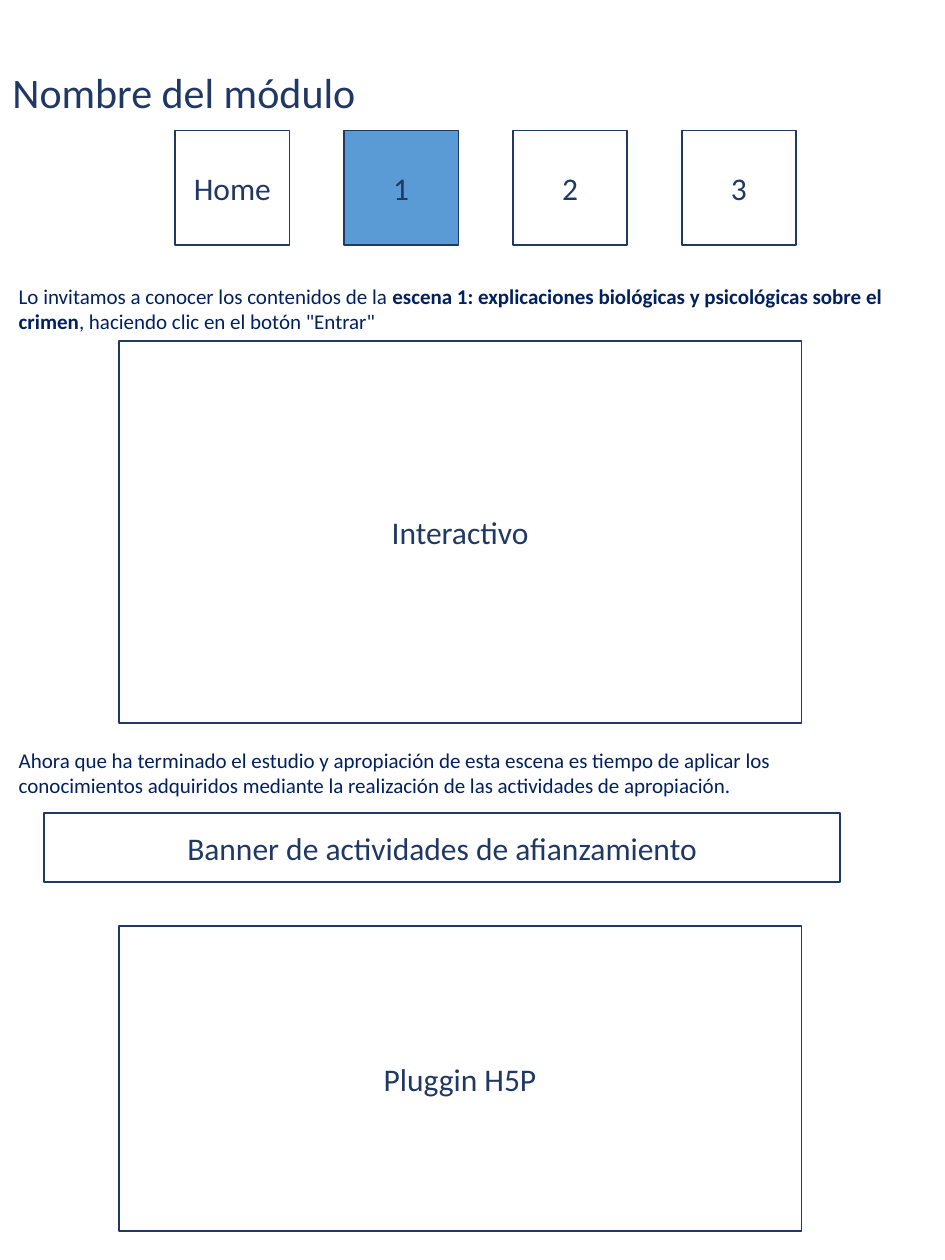
from pptx import Presentation
from pptx.dml.color import RGBColor
from pptx.enum.shapes import MSO_SHAPE as Shape
from pptx.enum.text import MSO_ANCHOR as Anchor, MSO_AUTO_SIZE as AutoSize, PP_ALIGN as Align
from pptx.util import Pt

THEME = {
    "font": "Calibri",
    "navy": RGBColor.from_string("203864"),
    "ink": RGBColor.from_string("002060"),
    "active": RGBColor.from_string("5B9BD5"),
    "title": Pt(24),
    "label": Pt(18),
    "body": Pt(12),
}


def write(para, text, size, color, bold=False):
    span = para.add_run()
    span.text = text
    formats = {"name": THEME["font"], "size": THEME[size], "bold": bold}
    for name, value in formats.items():
        setattr(span.font, name, value)
    span.font.color.rgb = THEME[color]


deck = Presentation()
deck.slide_width, deck.slide_height = Pt(540), Pt(720)
page = deck.slides.add_slide(deck.slide_layouts[6])

# Module title and introductory texts: place, wrapping, size, colour, spans (text, bold)
texts = [
    ((0, 34.7, 212.4, 36.3), False, "title", "navy", [("Nombre del módulo", False)]),
    ((3.6, 158.4, 517.7, 36.3), True, "body", "ink", [
        ("Lo invitamos a conocer los contenidos de la ", False),
        ("escena 1: explicaciones biológicas y psicológicas sobre el crimen", True),
        (', haciendo clic en el botón "Entrar"', False),
    ]),
    ((3.6, 423.4, 510.5, 36.3), True, "body", "ink", [
        ("Ahora que ha terminado el estudio y apropiación de esta escena es tiempo de aplicar "
         "los conocimientos adquiridos mediante la realización de las actividades de "
         "apropiación.", False),
    ]),
]
for place, wrap, size, color, spans in texts:
    box = page.shapes.add_textbox(*map(Pt, place))
    frame = box.text_frame
    frame.word_wrap = wrap
    frame.auto_size = AutoSize.SHAPE_TO_FIT_TEXT
    for text, bold in spans:
        write(frame.paragraphs[0], text, size, color, bold)

# Navigation buttons in an even row, followed by the content areas
tabs = ["Home", "1", "2", "3"]
current_tab = "1"
tab_left, tab_top, tab_side, tab_step = 100, 74.6, 65.5, 96.5
blocks = [
    (text, (tab_left + index * tab_step, tab_top, tab_side, tab_side))
    for index, text in enumerate(tabs)
]
area_left, area_width = 67.8, 390.2
blocks += [
    ("Interactivo", (area_left, 195, area_width, 218.2)),
    ("Banner de actividades de afianzamiento", (25.2, 464.5, 455, 39.6)),
    ("Pluggin H5P", (area_left, 529.2, area_width, 174.2)),
]
for text, place in blocks:
    block = page.shapes.add_shape(Shape.RECTANGLE, *map(Pt, place))
    block.shadow.inherit = False
    if text == current_tab:
        block.fill.solid()
        block.fill.fore_color.rgb = THEME["active"]
    else:
        block.fill.background()
    block.line.color.rgb = THEME["navy"]
    block.line.width = Pt(1)
    frame = block.text_frame
    frame.word_wrap = True
    frame.vertical_anchor = Anchor.MIDDLE
    para = frame.paragraphs[0]
    para.alignment = Align.CENTER
    write(para, text, "label", "navy")

deck.save("out.pptx")
